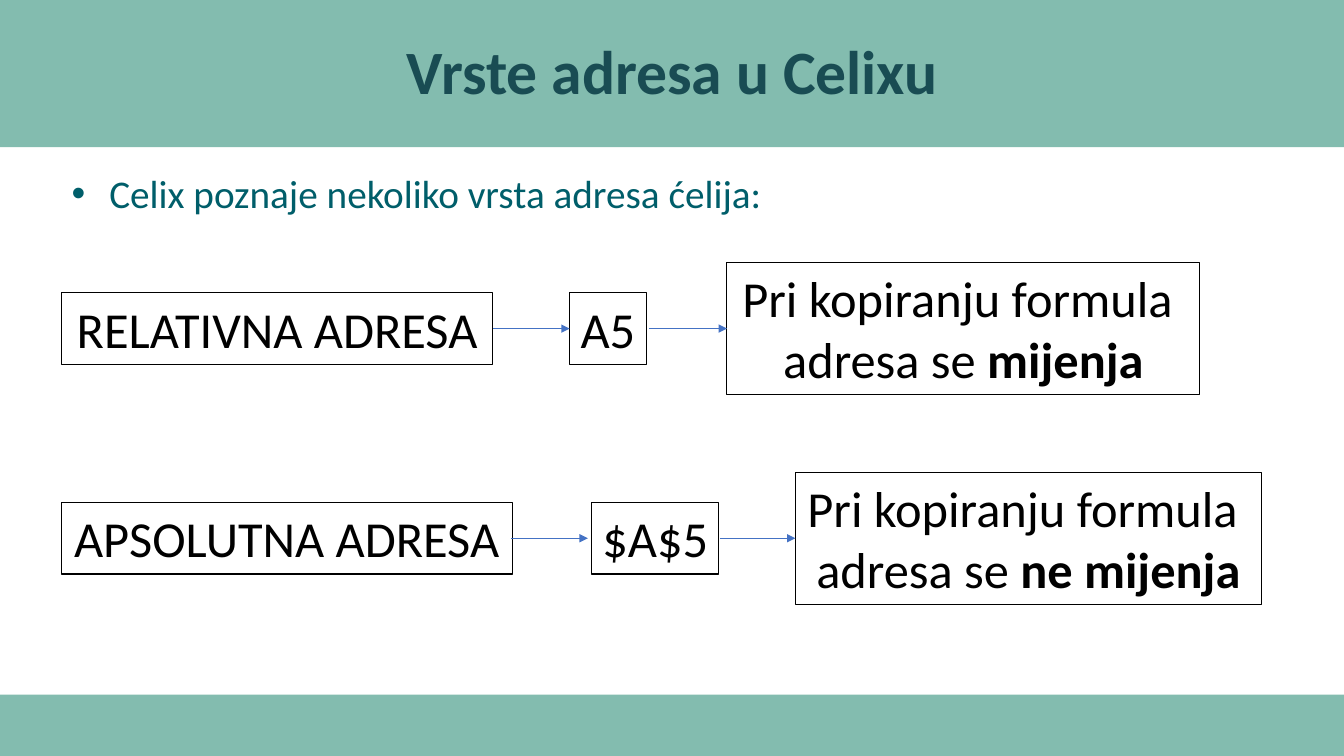
import pptx
import pptx.util
import pptx.dml.color
import pptx.enum.shapes
import pptx.enum.text
import pptx.oxml.ns
import lxml.etree

Inches, Pt = pptx.util.Inches, pptx.util.Pt
ALIGN = pptx.enum.text.PP_ALIGN
ANCHOR = pptx.enum.text.MSO_ANCHOR
AUTO_SIZE = pptx.enum.text.MSO_AUTO_SIZE

TITLE = "Vrste adresa u Celixu"
INTRO = "Celix poznaje nekoliko vrsta adresa ćelija:"
# Each box: left, width, lines of (text, bold) spans. Each arrow: start, end.
ROWS = [
    {
        "middle": 3.26,
        "boxes": [
            (0.61, 4.28, [[("RELATIVNA ADRESA", False)]]),
            (5.65, 0.76, [[("A5", False)]]),
            (7.21, 4.69, [[("Pri kopiranju formula ", False)],
                          [("adresa se ", False), ("mijenja", True)]]),
        ],
        "arrows": [(4.89, 5.65), (6.44, 7.21)],
    },
    {
        "middle": 5.34,
        "boxes": [
            (0.61, 4.47, [[("APSOLUTNA ADRESA", False)]]),
            (5.87, 1.26, [[("$A$5", False)]]),
            (7.89, 4.62, [[("Pri kopiranju formula ", False)],
                          [("adresa se ", False), ("ne mijenja", True)]]),
        ],
        "arrows": [(5.07, 5.83), (7.14, 7.89)],
    },
]
BANDS = [(0, 1.46), (6.89, 0.62)]  # top, height
WIDTH, HEIGHT = 13.33, 7.5
LINE_HEIGHT, BOX_PADDING = 0.6, 0.11
FONT = "Calibri"
COLORS = {"band": "83BCAF", "title": "194C53", "intro": "005E6A",
          "text": "000000", "arrow": "4472C4"}


def color(name):
    return pptx.dml.color.RGBColor.from_string(COLORS[name])


def set_font(font, size, color_name, bold=False):
    font.name, font.size, font.bold = FONT, Pt(size), bold
    font.color.rgb = color(color_name)


def add_band(page, top, height):
    """Draw a full-width band behind everything else."""
    band = page.shapes.add_shape(pptx.enum.shapes.MSO_SHAPE.RECTANGLE, 0, Inches(top),
                                 Inches(WIDTH), Inches(height))
    band.shadow.inherit = False
    band.fill.solid()
    band.fill.fore_color.rgb = color("band")
    band.line.fill.background()
    band.element.getparent().insert(2, band.element)


def fill_placeholder(holder, place, text, size, color_name, bold, align, anchor):
    holder.left, holder.top, holder.width, holder.height = map(Inches, place)
    frame = holder.text_frame
    frame.text = text
    frame.auto_size = AUTO_SIZE.NONE
    frame.vertical_anchor = anchor
    para = frame.paragraphs[0]
    para.alignment = align
    para.line_spacing = 0.9
    para.space_before = Pt(0)
    set_font(para.font, size, color_name, bold)


def remove_bullet(para):
    properties = para._p.get_or_add_pPr()
    properties.set("marL", "0")
    properties.set("indent", "0")
    lxml.etree.SubElement(properties, pptx.oxml.ns.qn("a:buNone"))


def add_box(shapes, middle, left, width, lines):
    height = len(lines) * LINE_HEIGHT + BOX_PADDING
    box = shapes.add_textbox(Inches(left), Inches(middle - height / 2),
                             Inches(width), Inches(height))
    box.line.color.rgb = color("text")
    box.line.width = Pt(0.75)
    frame = box.text_frame
    frame.word_wrap = False
    frame.auto_size = AUTO_SIZE.SHAPE_TO_FIT_TEXT
    for index, spans in enumerate(lines):
        para = frame.add_paragraph() if index else frame.paragraphs[0]
        para.alignment = ALIGN.CENTER
        set_font(para.font, 36, "text")
        for text, bold in spans:
            span = para.add_run()
            span.text = text
            if bold:
                span.font.bold = True


def add_arrow(shapes, middle, start, end):
    arrow = shapes.add_connector(pptx.enum.shapes.MSO_CONNECTOR.STRAIGHT, Inches(start),
                                 Inches(middle), Inches(end), Inches(middle))
    arrow.line.color.rgb = color("arrow")
    arrow.line.width = Pt(0.5)
    qn = pptx.oxml.ns.qn
    lxml.etree.SubElement(arrow.line._get_or_add_ln(), qn("a:tailEnd"), type="triangle")
    lxml.etree.SubElement(arrow.element.spPr, qn("a:effectLst"))


def main():
    deck = pptx.Presentation()
    deck.slide_width, deck.slide_height = Inches(WIDTH), Inches(HEIGHT)
    page = deck.slides.add_slide(deck.slide_layouts[1])
    for top, height in BANDS:
        add_band(page, top, height)
    title, intro = page.placeholders
    fill_placeholder(title, (0.92, 0.21, 11.5, 1.06), TITLE, 44, "title", True,
                     ALIGN.CENTER, ANCHOR.MIDDLE)
    remove_bullet(intro.text_frame.paragraphs[0])
    fill_placeholder(intro, (0.61, 1.68, 11.5, 0.54), INTRO, 28, "intro", False,
                     ALIGN.LEFT, ANCHOR.TOP)
    for row in ROWS:
        group = page.shapes.add_group_shape()
        for left, width, lines in row["boxes"]:
            add_box(group.shapes, row["middle"], left, width, lines)
        for start, end in row["arrows"]:
            add_arrow(group.shapes, row["middle"], start, end)
    deck.save("out.pptx")


if __name__ == "__main__":
    main()
